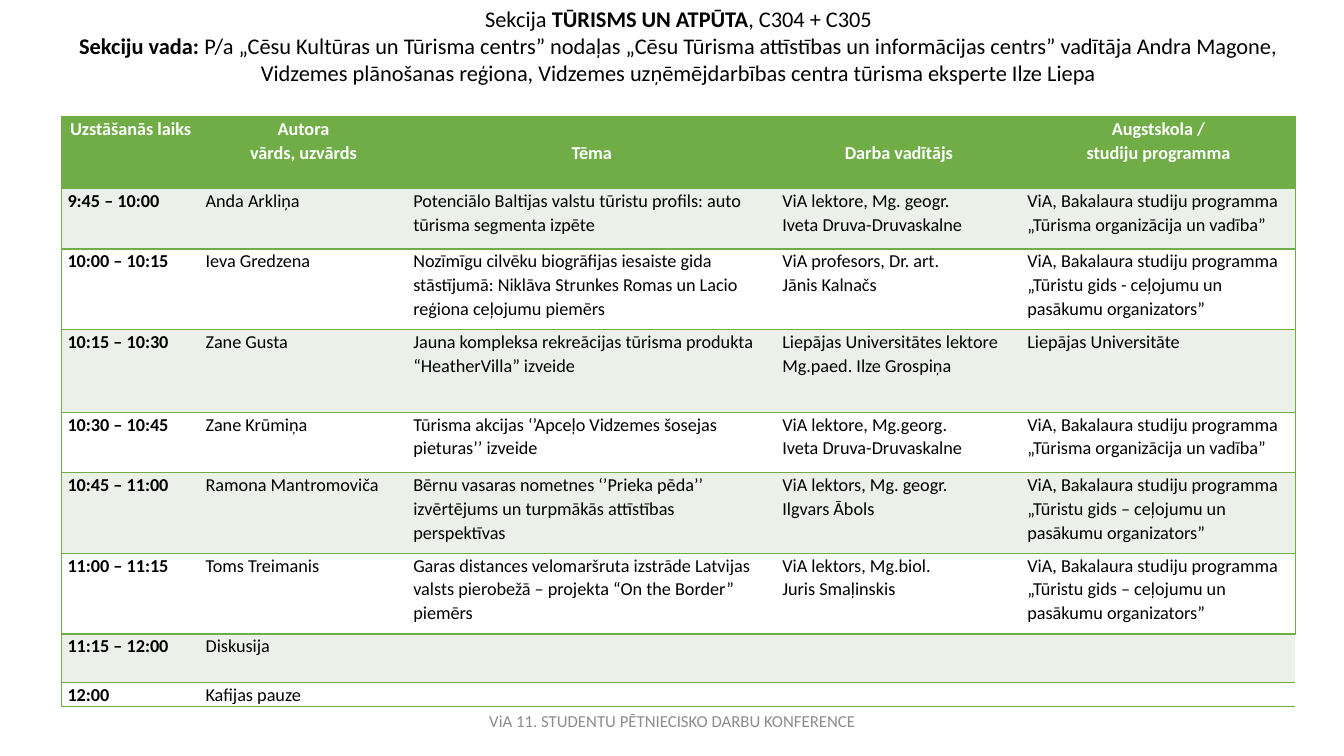
"""Builds the conference section slide with its timetable."""
from typing import NamedTuple

from lxml.etree import SubElement
from pptx import Presentation
from pptx.dml.color import RGBColor
from pptx.enum.text import MSO_ANCHOR, PP_ALIGN
from pptx.oxml.ns import qn
from pptx.util import Inches, Pt

GREEN = RGBColor(0x70, 0xAD, 0x47)
PALE = RGBColor(0xEB, 0xF1, 0xE9)
WHITE = RGBColor(0xFF, 0xFF, 0xFF)
BLACK = RGBColor(0, 0, 0)
GREY = RGBColor(0x8C, 0x8C, 0x8C)
FONT = "Calibri"
WIDTH, HEIGHT = Inches(13.33), Inches(7.5)
GRID_COLS, GRID_ROWS = 1333, 750


class Box(NamedTuple):
    """Place and size in grid columns and rows."""
    left: int
    top: int
    width: int
    height: int


class Run(NamedTuple):
    """Piece of text with its weight."""
    text: str
    bold: bool = False


class Session(NamedTuple):
    """Timetable row and its height in grid rows."""
    height: int
    time: str
    author: str
    topic: str = ""
    supervisor: str = ""
    programme: str = ""


COLUMN_WIDTHS = (137, 206, 366, 243, 272)
TABLE_BOX = Box(61, 116, sum(COLUMN_WIDTHS), 585)
TITLE_BOX = Box(61, 0, 1224, 91)
FOOTER_BOX = Box(442, 695, 450, 40)

ORGANISATION = "ViA, Bakalaura studiju programma „Tūrisma organizācija un vadība”"
GUIDE = "ViA, Bakalaura studiju programma „Tūristu gids – ceļojumu un pasākumu organizators”"

SESSIONS = [
    Session(71, "Uzstāšanās laiks", "Autora\nvārds, uzvārds", "Tēma",
            "Darba vadītājs", "Augstskola /\nstudiju programma"),
    Session(60, "9:45 – 10:00", "Anda Arkliņa",
            "Potenciālo Baltijas valstu tūristu profils: auto tūrisma segmenta izpēte",
            "ViA lektore, Mg. geogr.\nIveta Druva-Druvaskalne", ORGANISATION),
    Session(80, "10:00 – 10:15", "Ieva Gredzena",
            "Nozīmīgu cilvēku biogrāfijas iesaiste gida stāstījumā: "
            "Niklāva Strunkes Romas un Lacio reģiona ceļojumu piemērs",
            "ViA profesors, Dr. art.\nJānis Kalnačs", GUIDE.replace("–", "-")),
    Session(82, "10:15 – 10:30", "Zane Gusta",
            "Jauna kompleksa rekreācijas tūrisma produkta “HeatherVilla” izveide",
            "Liepājas Universitātes lektore Mg.paed. Ilze Grospiņa",
            "Liepājas Universitāte"),
    Session(60, "10:30 – 10:45", "Zane Krūmiņa",
            "Tūrisma akcijas ‘’Apceļo Vidzemes šosejas pieturas’’ izveide",
            "ViA lektore, Mg.georg.\nIveta Druva-Druvaskalne", ORGANISATION),
    Session(80, "10:45 – 11:00", "Ramona Mantromoviča",
            "Bērnu vasaras nometnes ‘’Prieka pēda’’ izvērtējums un "
            "turpmākās attīstības perspektīvas",
            "ViA lektors, Mg. geogr.\nIlgvars Ābols", GUIDE),
    Session(80, "11:00 – 11:15", "Toms Treimanis",
            "Garas distances velomaršruta izstrāde Latvijas valsts pierobežā – "
            "projekta “On the Border” piemērs",
            "ViA lektors, Mg.biol.\nJuris Smaļinskis", GUIDE),
    Session(48, "11:15 – 12:00", "Diskusija"),
    Session(24, "12:00", "Kafijas pauze"),
]

TITLE = [
    [Run("Sekcija "), Run("TŪRISMS UN ATPŪTA", True), Run(", C304 + C305")],
    [Run("Sekciju vada: ", True),
     Run("P/a „Cēsu Kultūras un Tūrisma centrs” nodaļas „Cēsu Tūrisma attīstības "
         "un informācijas centrs” vadītāja Andra Magone,")],
    [Run("Vidzemes plānošanas reģiona, Vidzemes uzņēmējdarbības centra "
         "tūrisma eksperte Ilze Liepa")],
]
FOOTER = [[Run("ViA 11. STUDENTU PĒTNIECISKO DARBU KONFERENCE")]]


def across(cols: int) -> int:
    """Return the length of a number of grid columns."""
    return round(WIDTH * cols / GRID_COLS)


def down(rows: int) -> int:
    """Return the length of a number of grid rows."""
    return round(HEIGHT * rows / GRID_ROWS)


def place(box: Box) -> tuple[int, int, int, int]:
    """Turn a grid box into slide lengths."""
    return across(box.left), down(box.top), across(box.width), down(box.height)


def style(r, size: int, color: RGBColor, bold: bool) -> None:
    """Format one run."""
    r.font.name, r.font.size, r.font.bold = FONT, Pt(size), bold
    r.font.color.rgb = color


def add_text(slide, box: Box, lines: list[list[Run]], size: int, color: RGBColor,
             anchor: MSO_ANCHOR) -> None:
    """Add centred lines of text."""
    tf = slide.shapes.add_textbox(*place(box)).text_frame
    tf.word_wrap, tf.vertical_anchor = True, anchor
    for i, line in enumerate(lines):
        p = tf.paragraphs[0] if i == 0 else tf.add_paragraph()
        p.alignment = PP_ALIGN.CENTER
        for run in line:
            r = p.add_run()
            r.text = run.text
            style(r, size, color, run.bold)


def add_borders(cell, sides: str) -> None:
    """Draw green borders on the given sides and clear the others."""
    tc_pr = cell._tc.get_or_add_tcPr()
    for side in "LRTB":
        ln = SubElement(tc_pr, qn(f"a:ln{side}"), w=str(Pt(1)))
        if side in sides:
            fill = SubElement(ln, qn("a:solidFill"))
            SubElement(fill, qn("a:srgbClr"), val=str(GREEN))
        else:
            SubElement(ln, qn("a:noFill"))


def fill_cell(cell, text: str, row: int, col: int) -> None:
    """Write and format one timetable cell."""
    header = row == 0
    last = len(COLUMN_WIDTHS) - 1
    add_borders(cell, "TB" + "L" * (col == 0) + "R" * (col == last))
    cell.fill.solid()
    cell.fill.fore_color.rgb = GREEN if header else PALE if row % 2 else WHITE
    cell.margin_left = cell.margin_right = across(6)
    cell.margin_top = down(24) if header and col in (2, 3) else 0
    cell.margin_bottom = 0
    cell.text_frame.text = text
    for p in cell.text_frame.paragraphs:
        p.line_spacing = 1.07
        p.alignment = PP_ALIGN.CENTER if header else PP_ALIGN.LEFT
        p.font.size = Pt(13)
        for r in p.runs:
            style(r, 13, WHITE if header else BLACK, header or col == 0)


def add_timetable(slide, box: Box, sessions: list[Session]) -> None:
    """Add the timetable of the section."""
    table = slide.shapes.add_table(len(sessions), len(COLUMN_WIDTHS), *place(box)).table
    table.first_row = table.horz_banding = False
    for column, width in zip(table.columns, COLUMN_WIDTHS):
        column.width = across(width)
    for row, session in enumerate(sessions):
        table.rows[row].height = down(session.height)
        for col, text in enumerate(session[1:]):
            fill_cell(table.cell(row, col), text, row, col)
        if not session.topic:
            table.cell(row, 1).merge(table.cell(row, len(COLUMN_WIDTHS) - 1))


def main() -> None:
    """Build and save the slide."""
    prs = Presentation()
    prs.slide_width, prs.slide_height = WIDTH, HEIGHT
    slide = prs.slides.add_slide(prs.slide_layouts[6])
    add_timetable(slide, TABLE_BOX, SESSIONS)
    add_text(slide, TITLE_BOX, TITLE, 16, BLACK, MSO_ANCHOR.TOP)
    add_text(slide, FOOTER_BOX, FOOTER, 12, GREY, MSO_ANCHOR.MIDDLE)
    prs.save("out.pptx")


if __name__ == "__main__":
    main()
